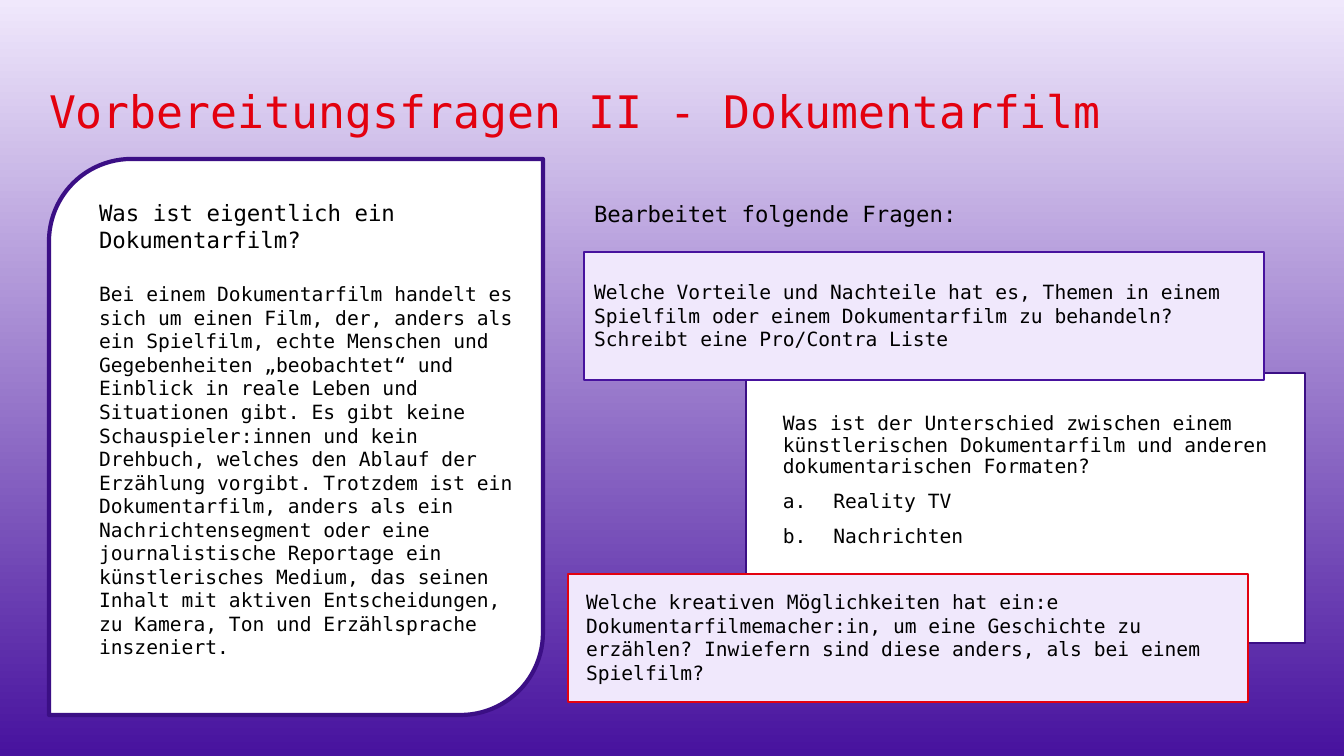
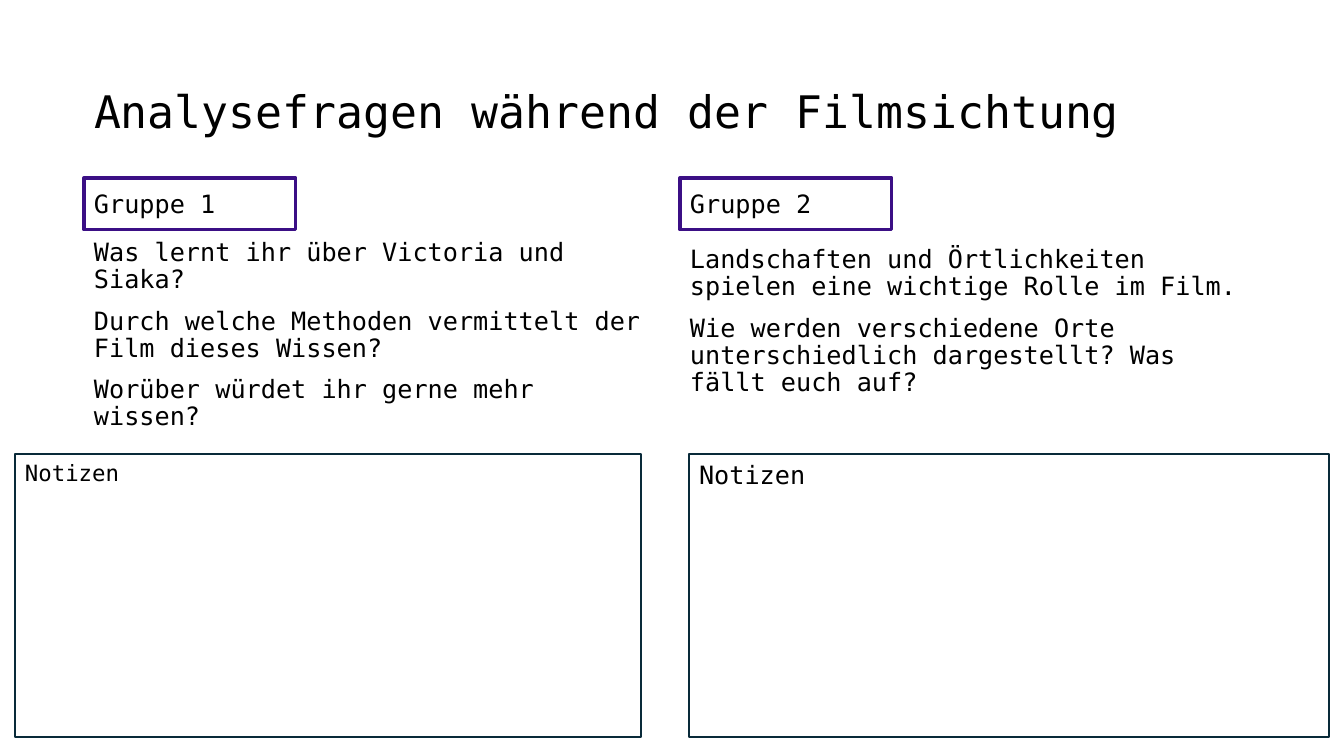
from lxml.etree import SubElement
from pptx import Presentation
from pptx.dml.color import RGBColor
from pptx.enum.shapes import MSO_SHAPE as SHAPE
from pptx.enum.text import MSO_ANCHOR as ANCHOR, PP_ALIGN as ALIGN
from pptx.oxml.ns import qn
from pptx.util import Pt

PX = 914400 / 100.8
FONT = "DejaVu Sans Mono"
BLACK, WHITE, RED = "000000", "FFFFFF", "E3010F"
LILAC, VIOLET, INDIGO, PETROL = "F0E8FC", "47129E", "3B0F85", "092A39"
rgb = RGBColor.from_string


def add_box(slide, area, kind=None, fill=None, line=None, weight=1.5):
    left, top, width, height = (round(n * PX) for n in area)
    if kind is None:
        return slide.shapes.add_textbox(left, top, width, height)
    box = slide.shapes.add_shape(kind, left, top, width, height)
    box.shadow.inherit = False
    if fill:
        box.fill.solid()
        box.fill.fore_color.rgb = rgb(fill)
    else:
        box.fill.background()
    box.line.color.rgb = rgb(line)
    box.line.width = Pt(weight)
    return box


def write(box, texts, size, color=BLACK, margins=(10, 5, 10), spacing=1.0,
          gap=0, anchor=ANCHOR.TOP):
    frame = box.text_frame
    frame.word_wrap = True
    frame.vertical_anchor = anchor
    frame.margin_left, frame.margin_top, frame.margin_right = (
        round(n * PX) for n in margins)
    frame.text = "\n".join(texts)
    for index, paragraph in enumerate(frame.paragraphs):
        paragraph.alignment = ALIGN.LEFT
        paragraph.line_spacing = spacing
        if index:
            paragraph.space_before = Pt(gap)
        font = paragraph.runs[0].font
        font.name, font.size = FONT, Pt(size)
        font.color.rgb = rgb(color)
    return frame.paragraphs


deck = Presentation()
deck.slide_width, deck.slide_height = round(1344 * PX), round(756 * PX)
preparation, analysis = (
    deck.slides.add_slide(deck.slide_layouts[6]) for _ in range(2))

backdrop = preparation.background.fill
backdrop.gradient()
backdrop.gradient_angle = 270
for stop, color, position in zip(backdrop.gradient_stops, (LILAC, VIOLET), (0, 1)):
    stop.color.rgb = rgb(color)
    stop.position = position
analysis.background.fill.solid()
analysis.background.fill.fore_color.rgb = rgb(WHITE)

for slide, title, left, color in (
    (preparation, "Vorbereitungsfragen II - Dokumentarfilm", 39, RED),
    (analysis, "Analysefragen während der Filmsichtung", 84, BLACK),
):
    write(add_box(slide, (left, 41, 1164, 146)), [title], 32, color,
          spacing=0.9, anchor=ANCHOR.MIDDLE)

formats = write(
    add_box(preparation, (746, 373, 559, 270), SHAPE.RECTANGLE, WHITE, INDIGO),
    ["Was ist der Unterschied zwischen einem künstlerischen Dokumentarfilm "
     "und anderen dokumentarischen Formaten?",
     "Reality TV", "Nachrichten"],
    14, margins=(37, 41, 10), spacing=0.9, gap=10)
for option in formats[1:]:
    properties = option._p.get_or_add_pPr()
    properties.set("marL", "457200")
    properties.set("indent", "-457200")
    SubElement(properties, qn("a:buAutoNum"), type="alphaLcPeriod")

for area, line, margins, texts in (
    ((568, 574, 680, 128), RED, (18, 16, 10),
     ["Welche kreativen Möglichkeiten hat ein:e Dokumentarfilmemacher:in, um "
      "eine Geschichte zu erzählen? Inwiefern sind diese anders, als bei einem "
      "Spielfilm?"]),
    ((584, 252, 680, 128), VIOLET, (10, 28, 10),
     ["Welche Vorteile und Nachteile hat es, Themen in einem Spielfilm oder "
      "einem Dokumentarfilm zu behandeln?",
      "Schreibt eine Pro/Contra Liste"]),
):
    write(add_box(preparation, area, SHAPE.RECTANGLE, LILAC, line), texts, 14,
          margins=margins)

definition = write(
    add_box(preparation, (49, 159, 494, 556), SHAPE.ROUND_2_DIAG_RECTANGLE,
            WHITE, INDIGO, 3),
    ["Was ist eigentlich ein Dokumentarfilm?",
     "Bei einem Dokumentarfilm handelt es sich um einen Film, der, anders als "
     "ein Spielfilm, echte Menschen und Gegebenheiten „beobachtet“ und Einblick "
     "in reale Leben und Situationen gibt. Es gibt keine Schauspieler:innen und "
     "kein Drehbuch, welches den Ablauf der Erzählung vorgibt. Trotzdem ist ein "
     "Dokumentarfilm, anders als ein Nachrichtensegment oder eine "
     "journalistische Reportage ein künstlerisches Medium, das seinen Inhalt "
     "mit aktiven Entscheidungen, zu Kamera, Ton und Erzählsprache inszeniert."],
    14, margins=(26, 16, 0), gap=21)
definition[0].runs[0].font.size = Pt(16)

write(add_box(preparation, (584, 203, 395, 31)), ["Bearbeitet folgende Fragen:"],
      15.9, spacing=0.7)

for group, left, questions_top, notes_left, notes_width, notes_size, questions in (
    ("Gruppe 1", 84, 235, 15, 626, 16,
     ["Was lernt ihr über Victoria und Siaka?",
      "Durch welche Methoden vermittelt der Film dieses Wissen?",
      "Worüber würdet ihr gerne mehr wissen?"]),
    ("Gruppe 2", 680, 242, 689, 640, 18,
     ["Landschaften und Örtlichkeiten spielen eine wichtige Rolle im Film.",
      "Wie werden verschiedene Orte unterschiedlich dargestellt? Was fällt "
      "euch auf?"]),
):
    write(add_box(analysis, (left, questions_top, 571, 210)), questions, 18,
          spacing=0.9, gap=10)
    write(add_box(analysis, (left, 178, 212, 52), SHAPE.RECTANGLE,
                  line=INDIGO, weight=2.25), [group], 18, margins=(10, 10, 10))
    write(add_box(analysis, (notes_left, 454, notes_width, 283), SHAPE.RECTANGLE,
                  line=PETROL), ["Notizen"], notes_size)

deck.save("out.pptx")
